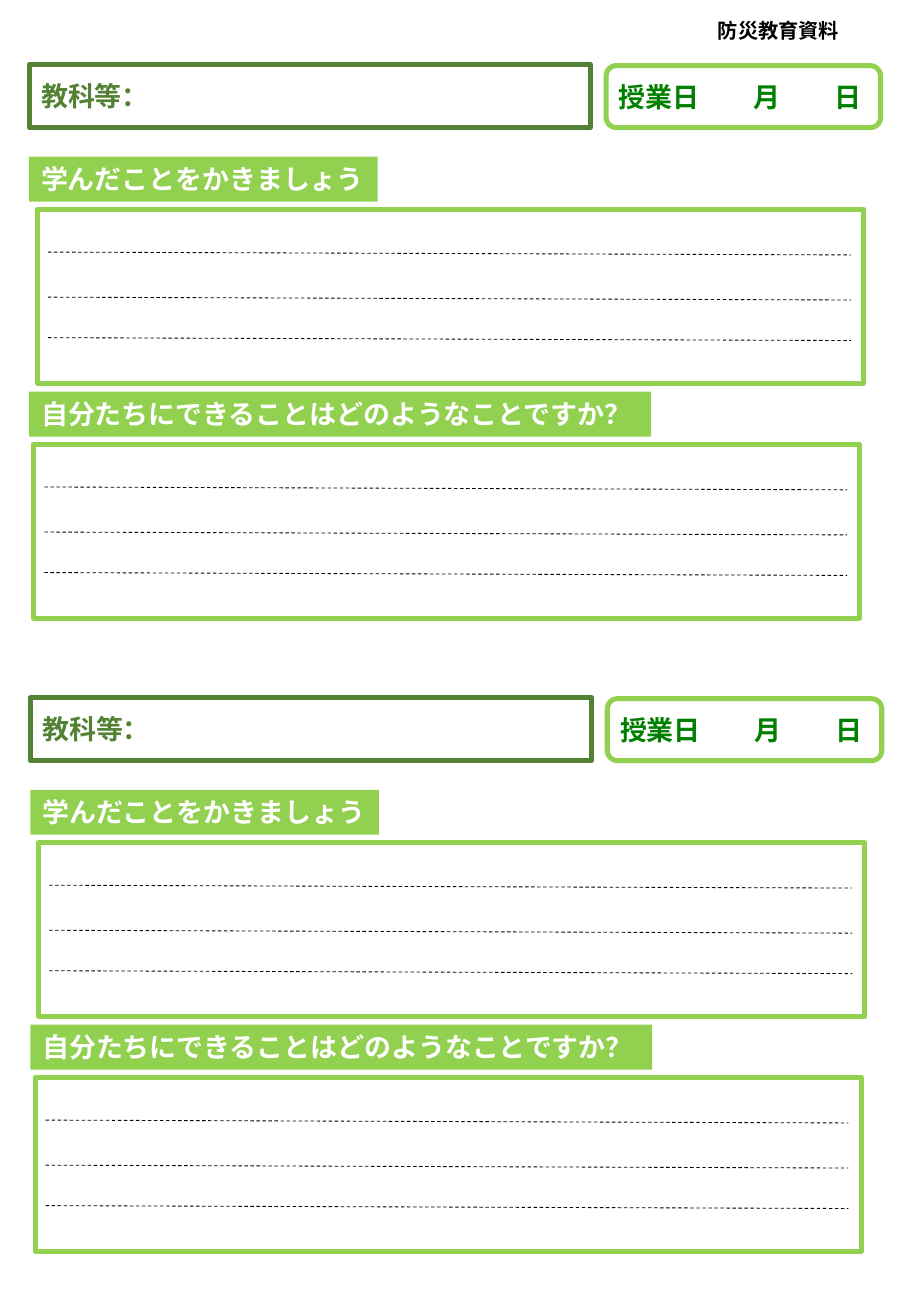
from lxml import etree
from pptx import Presentation
from pptx.dml.color import RGBColor
from pptx.enum import dml, shapes, text
from pptx.oxml.ns import qn
from pptx.util import Pt

FONT = "Noto Sans CJK JP"
DARK_GREEN = RGBColor(0x54, 0x82, 0x35)
LIGHT_GREEN = RGBColor(0x92, 0xD0, 0x50)
DATE_GREEN = RGBColor(0x00, 0x80, 0x00)
WHITE = RGBColor(0xFF, 0xFF, 0xFF)
BLACK = RGBColor(0x00, 0x00, 0x00)

presentation = Presentation()
presentation.slide_width = Pt(540)
presentation.slide_height = Pt(779.76)
slide = presentation.slides.add_slide(presentation.slide_layouts[6])


def add_box(left, top, width, height, fill=None, line=None,
            kind=shapes.MSO_SHAPE.RECTANGLE):
    shape = slide.shapes.add_shape(kind, Pt(left), Pt(top), Pt(width), Pt(height))
    shape.shadow.inherit = False
    if fill is None:
        shape.fill.background()
    else:
        shape.fill.solid()
        shape.fill.fore_color.rgb = fill
    if line is None:
        shape.line.fill.background()
    else:
        shape.line.color.rgb = line
        shape.line.width = Pt(3)
    return shape


def write(shape, wording, color, size=16, anchor=text.MSO_ANCHOR.MIDDLE,
          align=text.PP_ALIGN.LEFT):
    frame = shape.text_frame
    frame.word_wrap = True
    frame.vertical_anchor = anchor
    paragraph = frame.paragraphs[0]
    paragraph.text = wording
    paragraph.alignment = align
    paragraph.font.size = Pt(size)
    paragraph.font.bold = True
    paragraph.font.color.rgb = color
    paragraph.font.name = FONT
    # Japanese glyphs take the East Asian font
    defaults = paragraph._p.pPr.find(qn("a:defRPr"))
    etree.SubElement(defaults, qn("a:ea")).set("typeface", FONT)
    return paragraph


# Page title
title = add_box(390.24, 5.04, 142.56, 19.44, fill=WHITE)
write(title, "防災教育資料", BLACK, 12, text.MSO_ANCHOR.TOP, text.PP_ALIGN.CENTER)
title.text_frame.margin_top = Pt(5.76)

# Two identical worksheets: left and top of each
for x, y in ((17.28, 38.16), (18, 413.28)):
    # Subject
    subject = add_box(x, y, 332.64, 37.44, line=DARK_GREEN)
    write(subject, "教科等：", DARK_GREEN)

    # Lesson date, with room to fill in month and day
    date = add_box(x + 342, y + 0.72, 162.72, 36.72, line=LIGHT_GREEN,
                   kind=shapes.MSO_SHAPE.ROUNDED_RECTANGLE)
    paragraph = write(date, "授業日\t月\t日", DATE_GREEN)
    frame = date.text_frame
    frame.margin_left = Pt(5.76)
    frame.margin_top = frame.margin_right = frame.margin_bottom = 0
    tab_list = etree.Element(qn("a:tabLst"))
    for position in (80, 128):
        tab = etree.SubElement(tab_list, qn("a:tab"))
        tab.set("pos", str(Pt(position)))
        tab.set("algn", "l")
    paragraph._p.pPr.insert(0, tab_list)

    # Questions, each with a ruled answer box
    for question, width, offset, indent in (
            ("学んだことをかきましょう", 206.64, 54.72, 5.04),
            ("自分たちにできることはどのようなことですか？", 368.64, 193.9, 2.88)):
        top = y + offset
        heading = add_box(x, top, width, 26.64, fill=LIGHT_GREEN)
        write(heading, question, WHITE, anchor=text.MSO_ANCHOR.TOP)
        heading.text_frame.word_wrap = False
        heading.text_frame.auto_size = text.MSO_AUTO_SIZE.SHAPE_TO_FIT_TEXT

        add_box(x + indent, top + 31.3, 489.6, 102.96, fill=WHITE, line=LIGHT_GREEN)
        for drop in (56.5, 83.2, 107.2):
            start = x + indent + 6.12
            rule = slide.shapes.add_connector(
                shapes.MSO_CONNECTOR.STRAIGHT, Pt(start), Pt(top + drop),
                Pt(start + 475.92), Pt(top + drop + 1.7))
            rule.line.color.rgb = BLACK
            rule.line.width = Pt(0.5)
            rule.line.dash_style = dml.MSO_LINE.DASH
            etree.SubElement(rule._element.spPr, qn("a:effectLst"))

presentation.save("out.pptx")
